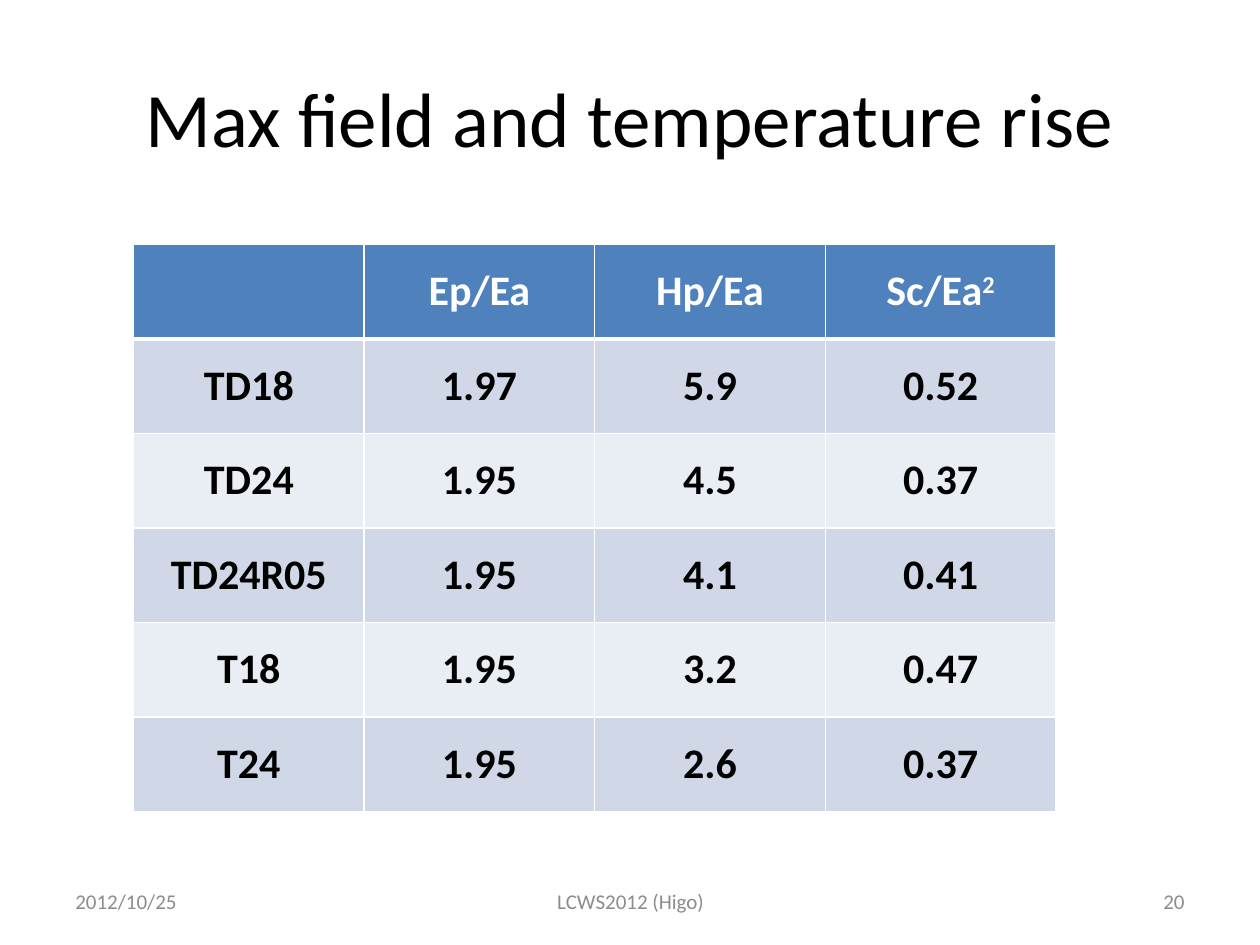
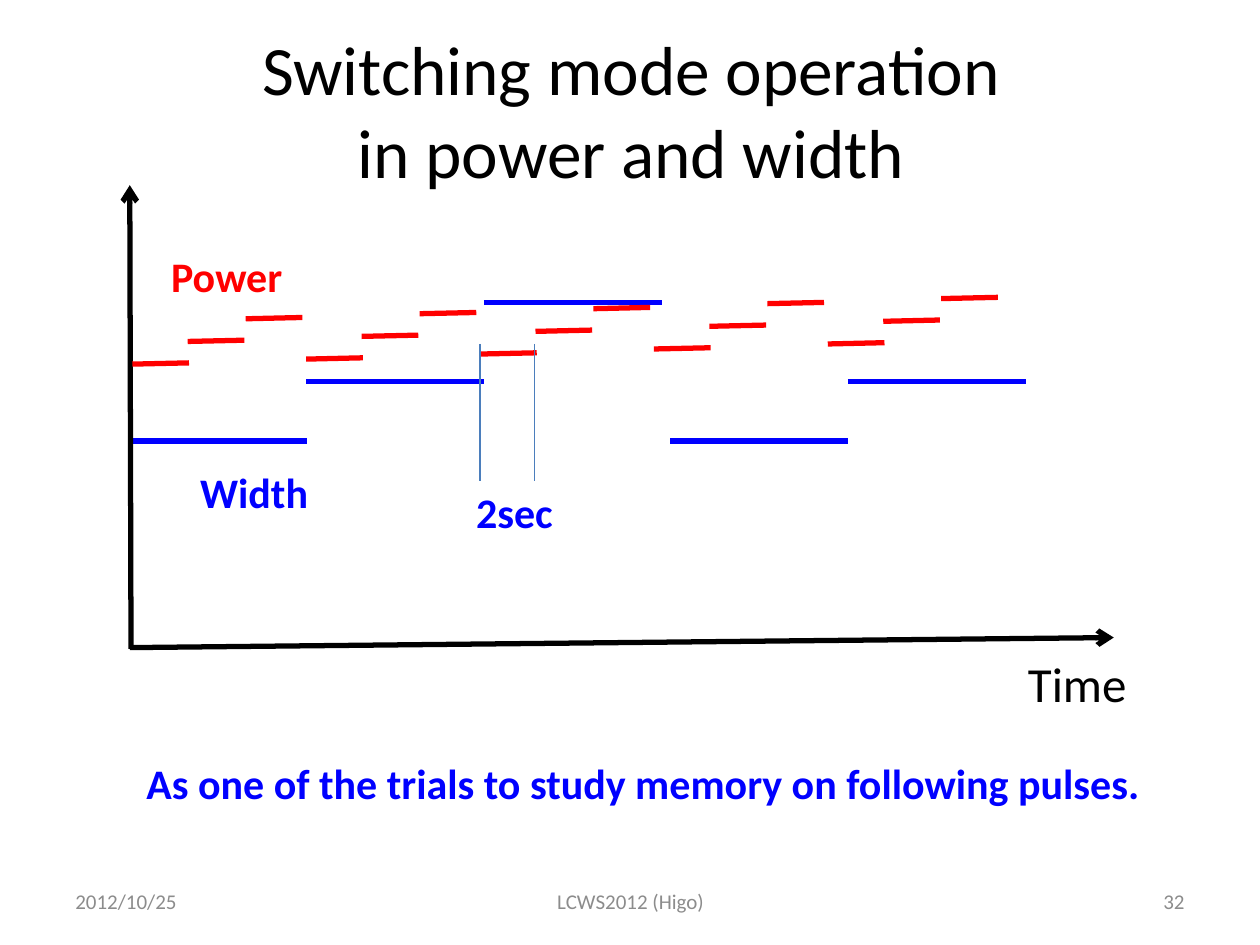
from dataclasses import dataclass

from lxml import etree
from pptx import Presentation
from pptx import util as u
from pptx.dml.color import RGBColor
from pptx.enum import shapes, text
from pptx.oxml import ns

ALIGN = text.PP_ALIGN
ANCHOR = text.MSO_ANCHOR


@dataclass(frozen=True)
class Theme:
    font: str = "Calibri"
    ink: str = "000000"
    paper: str = "FFFFFF"
    muted: str = "8C8C8C"
    power: str = "FF0000"
    width: str = "0000FF"
    guide: str = "4B7EBC"
    header: str = "4F81BD"
    bands: tuple = ("D0D8E8", "E9EDF4")
    title_size: float = 44
    long_title_size: float = 39.6
    axis_size: float = 28
    body_size: float = 24
    footer_size: float = 12
    heavy: float = 3
    light: float = 1
    hairline: float = 0.75


THEME = Theme()


def write(frame, content, size=THEME.body_size, color=THEME.ink, bold=False,
          align=ALIGN.LEFT):
    paragraph = frame.paragraphs[0]
    paragraph.alignment = align
    for index, line in enumerate(content.split("\n")):
        if index:
            paragraph.add_line_break()
        base, _, raised = line.partition("^")
        for part, baseline in ((base, 0), (raised, 30000)):
            if not part:
                continue
            run = paragraph.add_run()
            run.text = part
            run.font.name = THEME.font
            run.font.size = u.Pt(size)
            run.font.bold = bold
            run.font.color.rgb = RGBColor.from_string(color)
            if baseline:
                run.font._element.set("baseline", str(baseline))


class Deck:
    def __init__(self, theme):
        self.theme = theme
        self.file = Presentation()
        self.file.slide_width = u.Inches(10)
        self.file.slide_height = u.Inches(7.5)
        self.slide = None

    def start(self, number):
        self.slide = self.file.slides.add_slide(self.file.slide_layouts[6])
        footers = (
            ("2012/10/25", 0.5, 2.33, ALIGN.LEFT),
            ("LCWS2012 (Higo)", 3.42, 3.17, ALIGN.CENTER),
            (str(number), 7.17, 2.33, ALIGN.RIGHT),
        )
        for content, left, width, align in footers:
            self.label(content, (left, 6.95, width, 0.4), anchor=ANCHOR.MIDDLE,
                       size=self.theme.footer_size, color=self.theme.muted, align=align)

    def label(self, content, place, anchor=ANCHOR.TOP, wrap=True, **style):
        frame = self.slide.shapes.add_textbox(*map(u.Inches, place)).text_frame
        frame.word_wrap = wrap
        frame.vertical_anchor = anchor
        write(frame, content, **style)

    def title(self, content, place, size):
        self.label(content, place, anchor=ANCHOR.MIDDLE, size=size, align=ALIGN.CENTER)

    def line(self, start, end, color, weight=THEME.heavy, arrow=False):
        connector = self.slide.shapes.add_connector(
            shapes.MSO_CONNECTOR.STRAIGHT, *map(u.Inches, (*start, *end)))
        connector.line.width = u.Pt(weight)
        connector.line.color.rgb = RGBColor.from_string(color)
        properties = connector._element.spPr
        if arrow:
            etree.SubElement(properties.find(ns.qn("a:ln")), ns.qn("a:tailEnd"), type="arrow")
        etree.SubElement(properties, ns.qn("a:effectLst"))

    def border(self, cell, position, side, weight):
        edge = etree.Element(ns.qn(f"a:ln{side}"), w=str(u.Pt(weight)))
        fill = etree.SubElement(edge, ns.qn("a:solidFill"))
        etree.SubElement(fill, ns.qn("a:srgbClr"), val=self.theme.paper)
        cell._tc.get_or_add_tcPr().insert(position, edge)

    def table(self, rows, left, top, column_width, row_height):
        columns = len(rows[0])
        grid = self.slide.shapes.add_table(
            len(rows), columns, u.Inches(left), u.Inches(top),
            u.Inches(column_width * columns), u.Inches(row_height * len(rows))).table
        grid.horz_banding = False
        for row_index, row in enumerate(rows):
            is_header = row_index == 0
            fill = self.theme.header if is_header else self.theme.bands[(row_index - 1) % 2]
            color = self.theme.paper if is_header else self.theme.ink
            heavy_side = {0: "B", 1: "T"}.get(row_index)
            for column_index, content in enumerate(row):
                cell = grid.cell(row_index, column_index)
                cell.vertical_anchor = ANCHOR.MIDDLE
                cell.fill.solid()
                cell.fill.fore_color.rgb = RGBColor.from_string(fill)
                write(cell.text_frame, content, color=color, bold=True, align=ALIGN.CENTER)
                for position, side in enumerate("LRTB"):
                    weight = self.theme.heavy if side == heavy_side else self.theme.light
                    self.border(cell, position, side, weight)


def field_slide(deck):
    deck.start(20)
    deck.title("Max field and temperature rise", (0.5, 0.3, 9, 1.25), THEME.title_size)
    structures = (
        ("", "Ep/Ea", "Hp/Ea", "Sc/Ea^2"),
        ("TD18", "1.97", "5.9", "0.52"),
        ("TD24", "1.95", "4.5", "0.37"),
        ("TD24R05", "1.95", "4.1", "0.41"),
        ("T18", "1.95", "3.2", "0.47"),
        ("T24", "1.95", "2.6", "0.37"),
    )
    deck.table(structures, 1.06, 1.94, 1.83, 0.75)


def switching_slide(deck):
    deck.start(32)
    deck.title("Switching mode operation\nin power and width", (0.51, 0.13, 9, 1.48),
               THEME.long_title_size)

    width_levels = ((1.03, 3.5), (2.43, 3.03), (3.84, 2.4), (5.32, 3.5), (6.73, 3.03))
    for left, level in width_levels:
        deck.line((left, level), (left + 1.41, level), THEME.width)

    deck.line((1.03, 5.14), (8.84, 5.06), THEME.ink, arrow=True)
    deck.line((1.04, 5.15), (1.03, 1.47), THEME.ink, arrow=True)
    deck.label("Time", (8.06, 5.14, 1.08, 0.57), wrap=False, size=THEME.axis_size)

    power_steps = ((0, 0), (0.44, 0.18), (0.9, 0.36))
    for cycle in range(5):
        for shift, rise in power_steps:
            left = 1.05 + 1.38 * cycle + shift
            level = 2.89 - 0.04 * cycle - rise
            deck.line((left, level), (left + 0.45, level - 0.01), THEME.power)

    for pulse_edge in (3.81, 4.24):
        deck.line((pulse_edge, 2.73), (pulse_edge, 3.82), THEME.guide, THEME.hairline)

    captions = (
        ("Power", (1.26, 1.94, 1.17, 0.5), THEME.power),
        ("Width", (1.49, 3.65, 1.07, 0.5), THEME.width),
        ("2sec", (3.68, 3.81, 0.89, 0.5), THEME.width),
    )
    for content, place, color in captions:
        deck.label(content, place, wrap=False, color=color, bold=True)
    deck.label("As one of the trials to study memory on following pulses.",
               (0.54, 5.96, 9.13, 0.5), color=THEME.width, bold=True, align=ALIGN.CENTER)


def main():
    deck = Deck(THEME)
    field_slide(deck)
    switching_slide(deck)
    deck.file.save("out.pptx")


if __name__ == "__main__":
    main()
